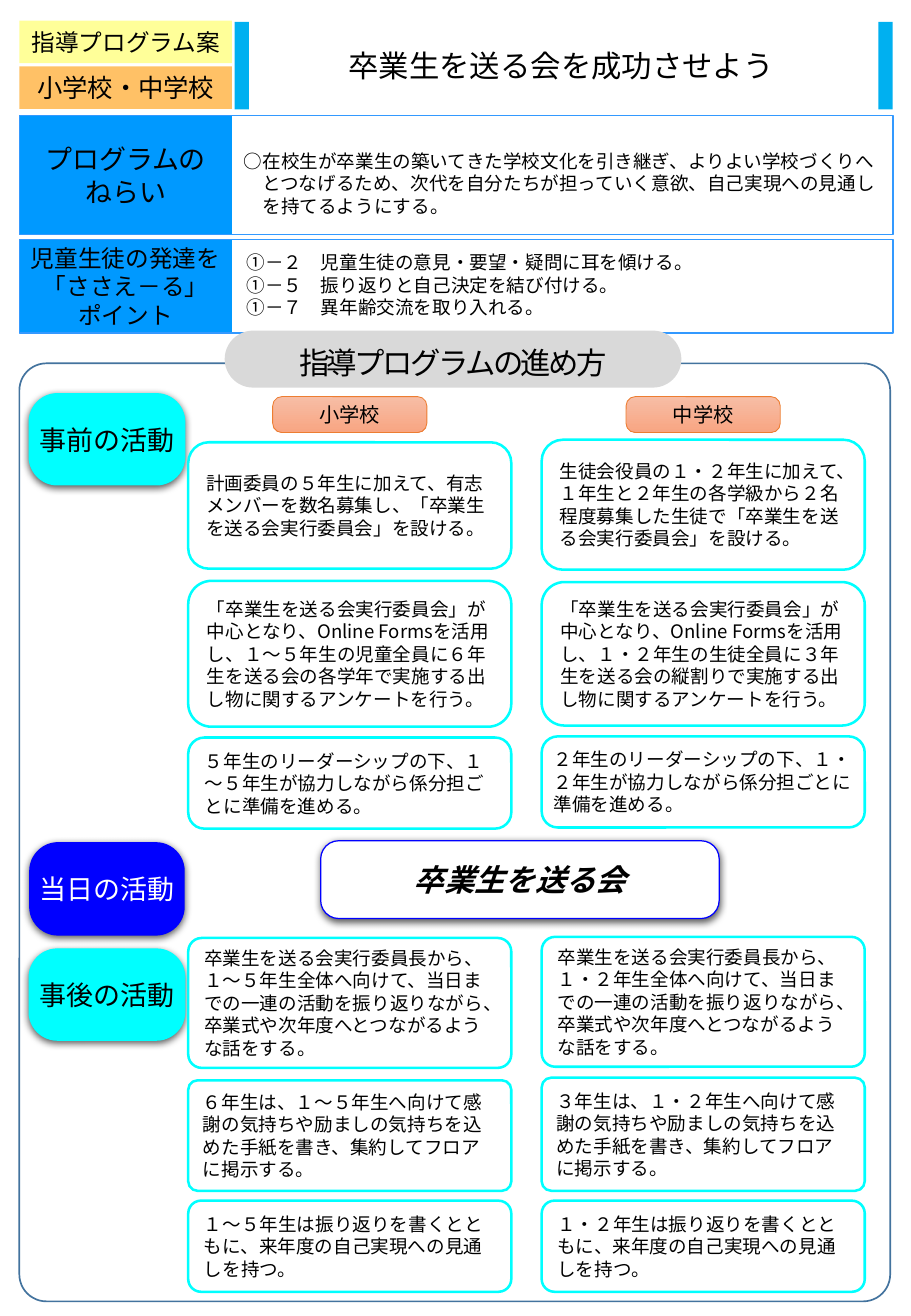
from dataclasses import dataclass

from lxml import etree
from pptx import Presentation
from pptx.dml.color import RGBColor
from pptx.enum import lang, shapes, text
from pptx.oxml import ns
from pptx.util import Pt


@dataclass(frozen=True)
class Theme:
    black: str = "000000"
    white: str = "FFFFFF"
    yellow: str = "FFFF99"
    orange: str = "FF9900"
    sky: str = "00B0F0"
    azure: str = "0099FF"
    azure_line: str = "3399FF"
    frame: str = "43739E"
    grey: str = "D9D9D9"
    cyan: str = "00FFFF"
    blue: str = "0000FF"
    school: tuple = ("F7BDA5", "F8A582")
    school_line: str = "ED7D31"
    gothic: str = "Noto Sans CJK JP"
    latin: str = "Calibri"
    body: float = 11
    school_size: float = 12
    label: float = 14
    level: float = 15
    stage: float = 16
    heading: float = 18
    pitch: float = 1.21


T = Theme()
RECT = shapes.MSO_SHAPE.RECTANGLE
ROUND = shapes.MSO_SHAPE.ROUNDED_RECTANGLE
COLUMN_WIDTH = 191.5
CORNERS = (0.163, 0.159, 0.177, 0.104, 0.085, 0.14)

# Each step: top measured from the column's top, height, wording
ELEMENTARY = (
    (28.1, 74.9, "計画委員の５年生に加えて、有志メンバーを数名募集し、「卒業生を送る会実行委員会」を設ける。"),
    (110.2, 86.4, "「卒業生を送る会実行委員会」が中心となり、Online Formsを活用し、１～５年生の児童全員に"
                  "６年生を送る会の各学年で実施する出し物に関するアンケートを行う。"),
    (203, 54, "５年生のリーダーシップの下、１～５年生が協力しながら係分担ごとに準備を進める。"),
    (321.8, 77, "卒業生を送る会実行委員長から、１～５年生全体へ向けて、当日までの一連の活動を"
                "振り返りながら、卒業式や次年度へとつながるような話をする。"),
    (406.1, 65.5, "６年生は、１～５年生へ向けて感謝の気持ちや励ましの気持ちを込めた手紙を書き、"
                  "集約してフロアに掲示する。"),
    (477.4, 54, "１～５年生は振り返りを書くとともに、来年度の自己実現への見通しを持つ。"),
)
JUNIOR_HIGH = (
    (26.6, 77, "生徒会役員の１・２年生に加えて、１年生と２年生の各学級から２名程度募集した生徒で"
               "「卒業生を送る会実行委員会」を設ける。"),
    (110.9, 85, "「卒業生を送る会実行委員会」が中心となり、Online Formsを活用し、１・２年生の生徒全員に"
                "３年生を送る会の縦割りで実施する出し物に関するアンケートを行う。"),
    (202.3, 54, "２年生のリーダーシップの下、１・２年生が協力しながら係分担ごとに準備を進める。"),
    (321.1, 77, "卒業生を送る会実行委員長から、１・２年生全体へ向けて、当日までの一連の活動を"
                "振り返りながら、卒業式や次年度へとつながるような話をする。"),
    (404.6, 67, "３年生は、１・２年生へ向けて感謝の気持ちや励ましの気持ちを込めた手紙を書き、"
                "集約してフロアに掲示する。"),
    (477.4, 54, "１・２年生は振り返りを書くとともに、来年度の自己実現への見通しを持つ。"),
)


def rgb(color):
    return RGBColor.from_string(color)


def write(shape, wording, size, font=T.gothic, color=T.black, center=True, wrap=True,
          bold=False, italic=False, spacing=None, tracking=None, side=7.2):
    """Fill a shape with one paragraph per line of wording."""
    frame = shape.text_frame
    frame.text = wording
    frame.auto_size = text.MSO_AUTO_SIZE.NONE
    frame.word_wrap = wrap
    frame.vertical_anchor = text.MSO_ANCHOR.MIDDLE
    frame.margin_left = frame.margin_right = Pt(side)
    frame.margin_top = frame.margin_bottom = Pt(3.6)
    for paragraph in frame.paragraphs:
        paragraph.alignment = text.PP_ALIGN.CENTER if center else text.PP_ALIGN.LEFT
        if spacing:
            paragraph.line_spacing = spacing
        for run in paragraph.runs:
            run.font.name, run.font.size = font, Pt(size)
            run.font.bold, run.font.italic = bold, italic
            run.font.color.rgb = rgb(color)
            run.font.language_id = lang.MSO_LANGUAGE_ID.JAPANESE
            properties = run.font._element
            latin = properties.find(ns.qn("a:latin"))
            east_asian = etree.Element(ns.qn("a:ea"), typeface=font)
            latin.addnext(east_asian)
            if tracking:
                properties.set("spc", str(int(tracking * 100)))


def write_lines(shape, wording, size=T.body, **style):
    write(shape, wording, size, spacing=Pt(round(size * T.pitch, 2)), **style)


def panel(slide, box, kind=RECT, fill=None, line=None, weight=1, corner=None,
          alpha=None, shadow=False):
    """Draw a preset shape; a pair of fill colours makes a vertical gradient."""
    shape = slide.shapes.add_shape(kind, *map(Pt, box))
    shape.shadow.inherit = False
    if corner is not None:
        shape.adjustments[0] = corner
    if isinstance(fill, tuple):
        shape.fill.gradient()
        shape.fill.gradient_angle = 270
        for stop, color in zip(shape.fill.gradient_stops, fill):
            stop.color.rgb = rgb(color)
    elif fill:
        shape.fill.solid()
        shape.fill.fore_color.rgb = rgb(fill)
    else:
        shape.fill.background()
    if line:
        shape.line.color.rgb = rgb(line)
        shape.line.width = Pt(weight)
    else:
        shape.line.fill.background()
    properties = shape.element.spPr
    if alpha:
        color = properties.find(ns.qn("a:solidFill"))[0]
        etree.SubElement(color, ns.qn("a:alpha"), val=str(alpha * 1000))
    if shadow:
        outer = etree.SubElement(properties.find(ns.qn("a:effectLst")), ns.qn("a:outerShdw"),
                                 blurRad=str(Pt(4.5)), dist=str(Pt(1.5)), dir="5400000",
                                 algn="ctr", rotWithShape="0")
        shade = etree.SubElement(outer, ns.qn("a:srgbClr"), val=T.black)
        etree.SubElement(shade, ns.qn("a:alpha"), val="63000")
    return shape


def header(slide, box):
    left, top, width, height = box
    program = panel(slide, (left, top, 126, 25.2), fill=T.yellow)
    write(program, "指導プログラム案", T.label, font=T.latin, wrap=False)
    level = panel(slide, (left, top + 27.2, 126, 25.2), fill=T.orange, alpha=60)
    write(level, "小学校・中学校", T.level, font=T.latin, wrap=False)
    for bar_left in (left + 127.5, left + width - 8.6):
        panel(slide, (bar_left, top + 0.7, 8.6, height - 0.7), fill=T.sky)
    title = slide.shapes.title
    title.left, title.top, title.width, title.height = map(
        Pt, (left + 133.9, top + 12.2, 374.4, 28.8))
    write(title, "卒業生を送る会を成功させよう", T.heading)


def summary_row(slide, box, heading, heading_size, details, inset, drop):
    """Framed row: blue heading cell, then details set in and lowered by drop."""
    left, top, width, height = box
    cell = panel(slide, (left, top, 126, height), fill=T.azure)
    write_lines(cell, heading, heading_size, font=T.latin, wrap=False)
    panel(slide, box, line=T.azure_line)
    note = slide.shapes.add_textbox(*map(Pt, (left + inset, top + drop, 392.4, height)))
    write_lines(note, details, center=False)


def procedure_frame(slide, box):
    left, top, width, height = box
    panel(slide, box, ROUND, line=T.frame, corner=0.031)
    heading = panel(slide, (left + 121.7, top - 19.4, 270.7, 33.8), ROUND,
                    fill=T.grey, corner=0.5)
    write(heading, "指導プログラムの進め方", T.heading, spacing=1.2, tracking=-1.5)


def stage(slide, box, name, fill=T.cyan, line=T.cyan, color=T.black):
    badge = panel(slide, box, ROUND, fill=fill, line=line, weight=0.75, corner=0.31, shadow=True)
    write(badge, name, T.stage, color=color, wrap=False)


def ceremony(slide, box):
    event = panel(slide, box, ROUND, fill=T.white, line=T.blue, weight=0.75,
                  corner=0.233, shadow=True)
    write(event, "卒業生を送る会", T.heading, bold=True, italic=True, wrap=False)


def school_column(slide, box, school, steps, tight_step=None):
    left, top, width, height = box
    label = panel(slide, (left + (width - 91.4) / 2, top + 1, 91.4, 21.3), ROUND,
                  fill=T.school, line=T.school_line, weight=0.5, corner=0.258)
    write(label, school, T.school_size)
    for index, ((offset, step_height, wording), corner) in enumerate(zip(steps, CORNERS)):
        step = panel(slide, (left, top + offset, width, step_height), ROUND,
                     fill=T.white, line=T.cyan, weight=1.5, corner=corner)
        write_lines(step, wording, center=False, side=4.3 if index == tight_step else 7.2)


def main():
    deck = Presentation()
    deck.slide_width, deck.slide_height = Pt(540), Pt(779.76)
    slide = deck.slides.add_slide(deck.slide_layouts[5])
    header(slide, (11.5, 12.2, 517.7, 52.6))
    summary_row(slide, (11.5, 68.4, 517.7, 70.6), "プログラムの\nねらい", T.stage,
                "○在校生が卒業生の築いてきた学校文化を引き継ぎ、よりよい学校づくりへ\n"
                "　とつなげるため、次代を自分たちが担っていく意欲、自己実現への見通し\n"
                "　を持てるようにする。", inset=126, drop=5)
    summary_row(slide, (11.5, 142, 517.7, 55.4),
                "児童生徒の発達を\n「ささえ－る」\nポイント", T.label,
                "①－２　児童生徒の意見・要望・疑問に耳を傾ける。\n"
                "①－５　振り返りと自己決定を結び付ける。\n"
                "①－７　異年齢交流を取り入れる。", inset=127.5, drop=-1)
    procedure_frame(slide, (11.5, 215.3, 516.2, 555.8))
    stage(slide, (17.3, 233.3, 92.2, 54), "事前の活動")
    stage(slide, (17.3, 499, 92.2, 55.4), "当日の活動", fill=T.blue, line=None, color=T.white)
    stage(slide, (17.3, 562.3, 92.2, 54), "事後の活動")
    school_column(slide, (111.6, 234, COLUMN_WIDTH, 531.4), "小学校", ELEMENTARY)
    school_column(slide, (321.1, 234, COLUMN_WIDTH, 531.4), "中学校", JUNIOR_HIGH, tight_step=2)
    ceremony(slide, (190.1, 498.2, 236.2, 46.1))
    deck.save("out.pptx")


if __name__ == "__main__":
    main()
